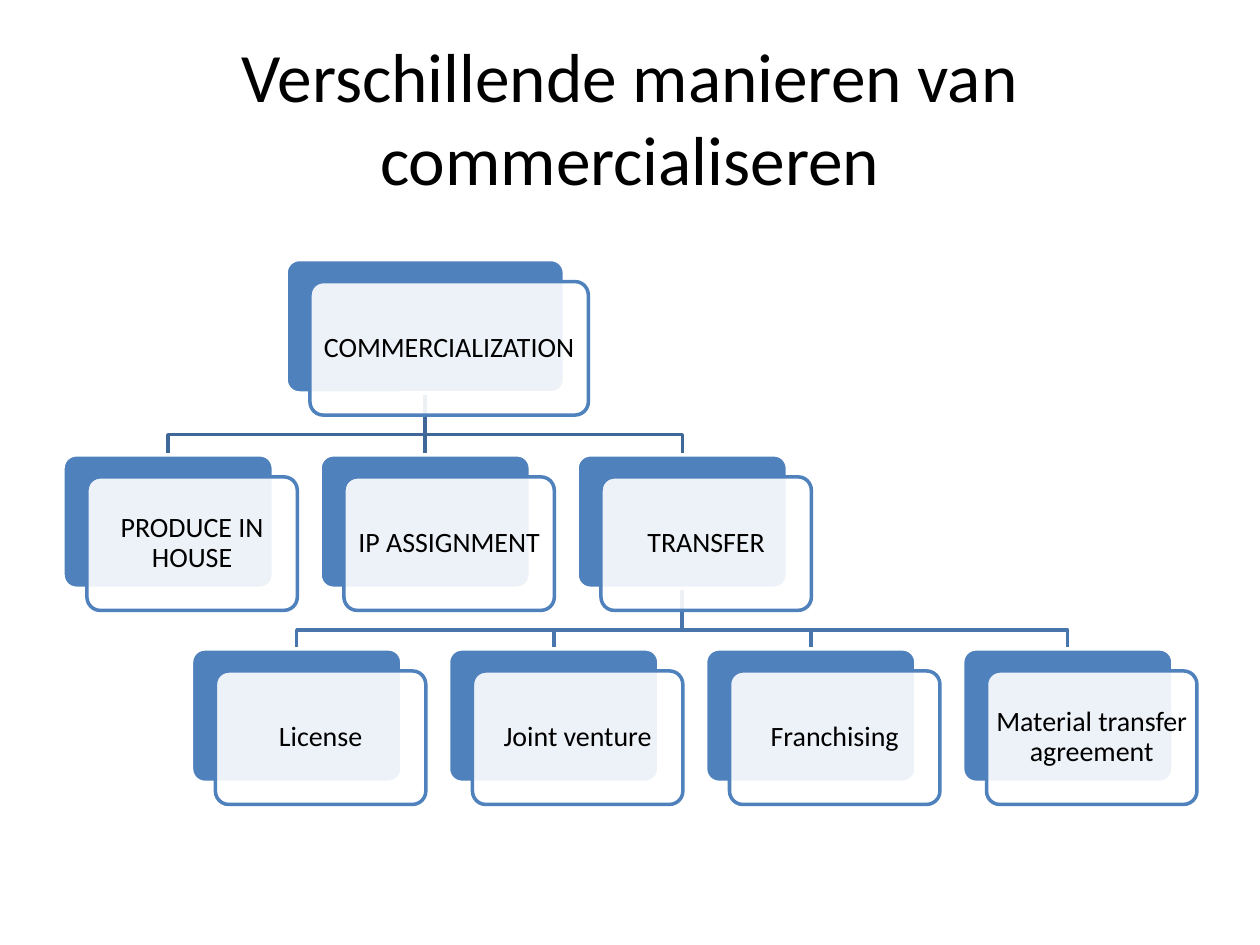
from lxml import etree
from pptx import Presentation
from pptx.dml.color import RGBColor
from pptx.enum.shapes import MSO_CONNECTOR, MSO_SHAPE
from pptx.enum.text import MSO_ANCHOR, MSO_AUTO_SIZE, PP_ALIGN
from pptx.oxml.ns import qn
from pptx.util import Inches, Pt

COLORS = {"text": "000000", "card": "4F81BD", "paper": "FFFFFF",
          "branch1": "3F6797", "branch2": "4875AC"}
CARD_H, SHIFT_X, SHIFT_Y = 1.06, 0.19, 0.175
CHILD_W, COLUMN, ELBOW = 1.67, 2.04, 0.33
ROWS = [2.06, 3.61, 5.15]


class Deck:
    def __init__(self, prs, font="Calibri"):
        self.font = font
        self.slide = prs.slides.add_slide(prs.slide_layouts[5])

    def color(self, name):
        return RGBColor.from_string(COLORS[name])

    def format_text(self, tf, size):
        tf.word_wrap = True
        tf.auto_size = MSO_AUTO_SIZE.NONE
        tf.vertical_anchor = MSO_ANCHOR.MIDDLE
        for p in tf.paragraphs:
            p.alignment = PP_ALIGN.CENTER
            for r in p.runs:
                r.font.name, r.font.size = self.font, Pt(size)
                r.font.color.rgb = self.color("text")

    def title(self, text, x, y, w, h):
        sp = self.slide.shapes.title
        sp.left, sp.top, sp.width, sp.height = map(Inches, (x, y, w, h))
        sp.text_frame.text = text
        self.format_text(sp.text_frame, 39.6)

    def panel(self, x, y, w, fill, line):
        sp = self.slide.shapes.add_shape(
            MSO_SHAPE.ROUNDED_RECTANGLE, *map(Inches, (x, y, w, CARD_H)))
        sp.adjustments[0] = 0.1
        sp.shadow.inherit = False
        sp.fill.solid()
        sp.fill.fore_color.rgb = self.color(fill)
        sp.line.color.rgb = self.color(line)
        sp.line.width = Pt(2)
        return sp

    def card(self, text, x, y, w):
        """Draw a solid panel with a translucent labelled one over it."""
        back = self.panel(x, y, w, "card", "paper")
        front = self.panel(x + SHIFT_X, y + SHIFT_Y, w, "paper", "card")
        clr = front.fill._xPr.find(qn("a:solidFill"))[0]
        etree.SubElement(clr, qn("a:alpha")).set("val", "90000")
        tf = front.text_frame
        tf.text = text
        tf.margin_left = tf.margin_right = Inches(0.04)
        tf.margin_top = tf.margin_bottom = Inches(0.04)
        self.format_text(tf, 16)
        tf.paragraphs[0].line_spacing = 0.9
        return back

    def branch(self, parent, child, color):
        """Join parent to child, behind the cards."""
        x1, y1 = parent.left + parent.width // 2, parent.top + parent.height
        x2, y2 = child.left + child.width // 2, child.top
        shapes = self.slide.shapes
        if abs(x1 - x2) < Inches(0.02):
            sp = shapes.add_connector(MSO_CONNECTOR.STRAIGHT, x1, y1, x2, y2)
            sp.begin_connect(parent, 2)
            sp.end_connect(child, 0)
            etree.SubElement(sp._element.spPr, qn("a:effectLst"))
        else:
            bend = y1 + Inches(ELBOW)
            builder = shapes.build_freeform(x1, y1)
            builder.add_line_segments([(x1, bend), (x2, bend), (x2, y2)], close=False)
            sp = builder.convert_to_shape()
            sp.fill.background()
            sp.shadow.inherit = False
        sp.line.color.rgb = self.color(color)
        sp.line.width = Pt(2)
        shapes._spTree.insert(2, sp._element)

    def children(self, parent, labels, x, y, color):
        cards = [self.card(label, x + i * COLUMN, y, CHILD_W)
                 for i, label in enumerate(labels)]
        for child in cards:
            self.branch(parent, child, color)
        return cards


def main():
    prs = Presentation()
    prs.slide_width, prs.slide_height = Inches(10), Inches(7.5)
    s = Deck(prs)
    s.title("Verschillende manieren van commercialiseren", 0.5, 0.3, 9, 1.25)

    # Organisation tree
    root = s.card("COMMERCIALIZATION", 2.27, ROWS[0], 2.21)
    ways = s.children(root, ["PRODUCE IN HOUSE", "IP ASSIGNMENT", "TRANSFER"],
                      0.5, ROWS[1], "branch1")
    s.children(ways[-1], ["License", "Joint venture", "Franchising",
                          "Material transfer agreement"],
               0.5 + COLUMN / 2, ROWS[2], "branch2")
    prs.save("out.pptx")


if __name__ == "__main__":
    main()
